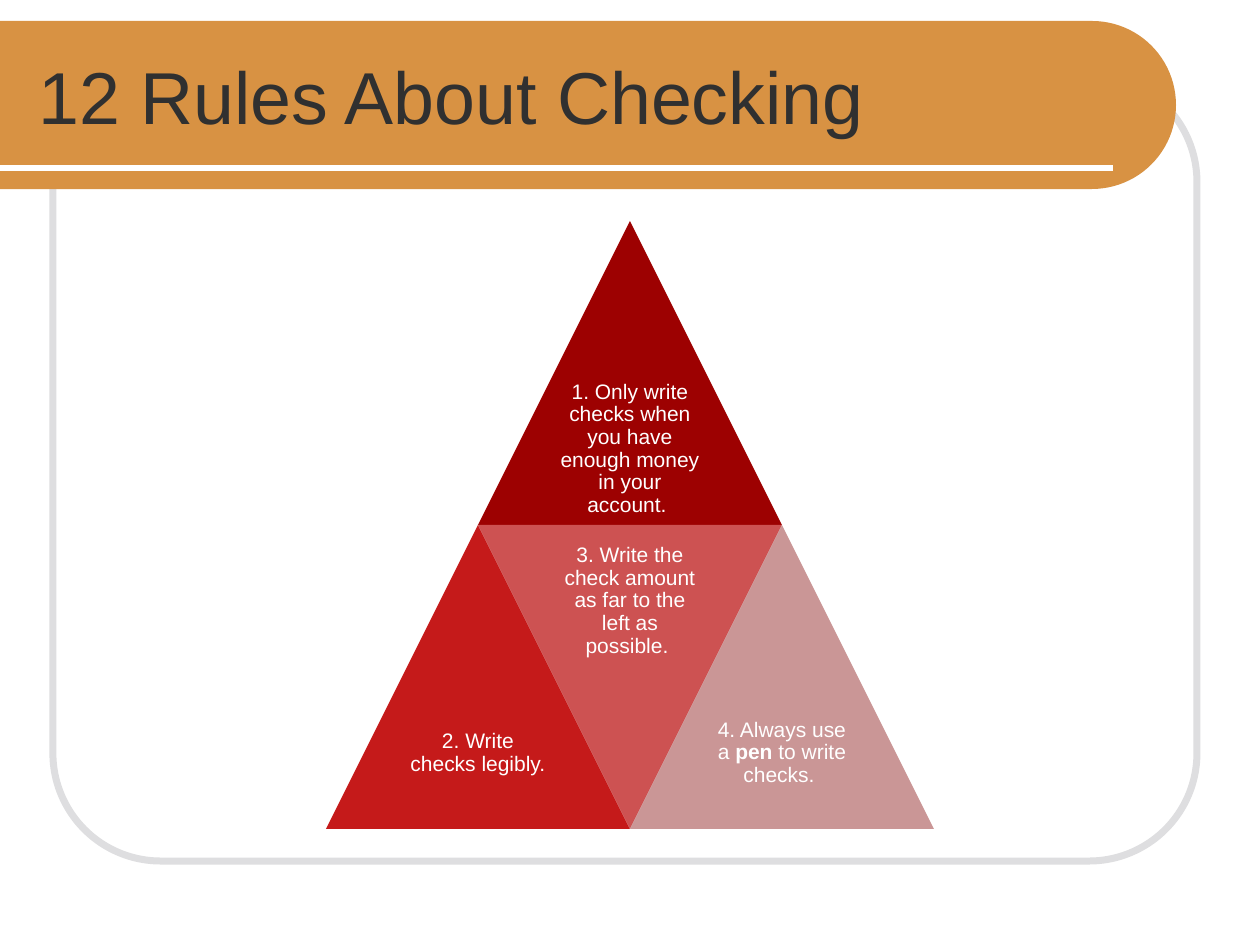
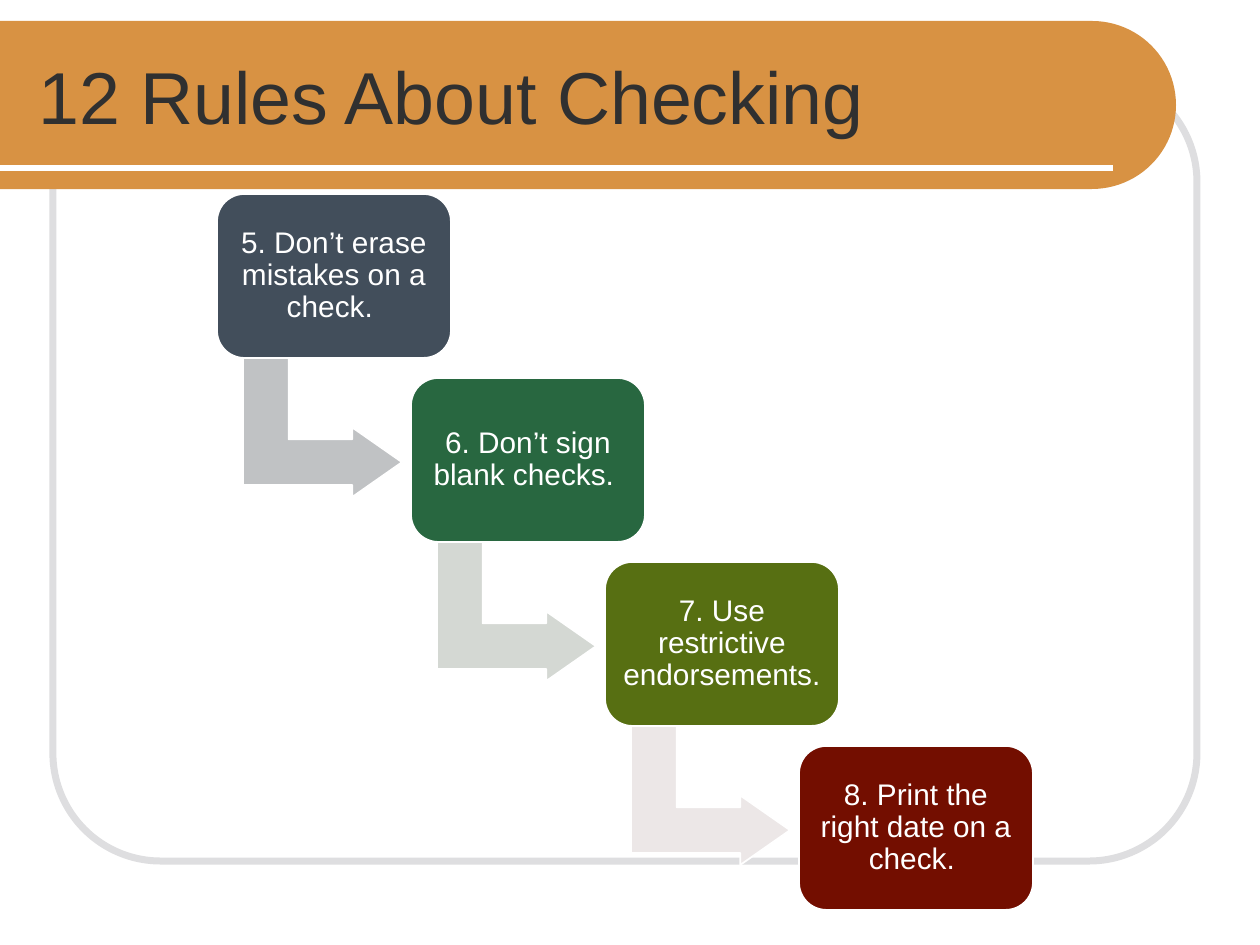
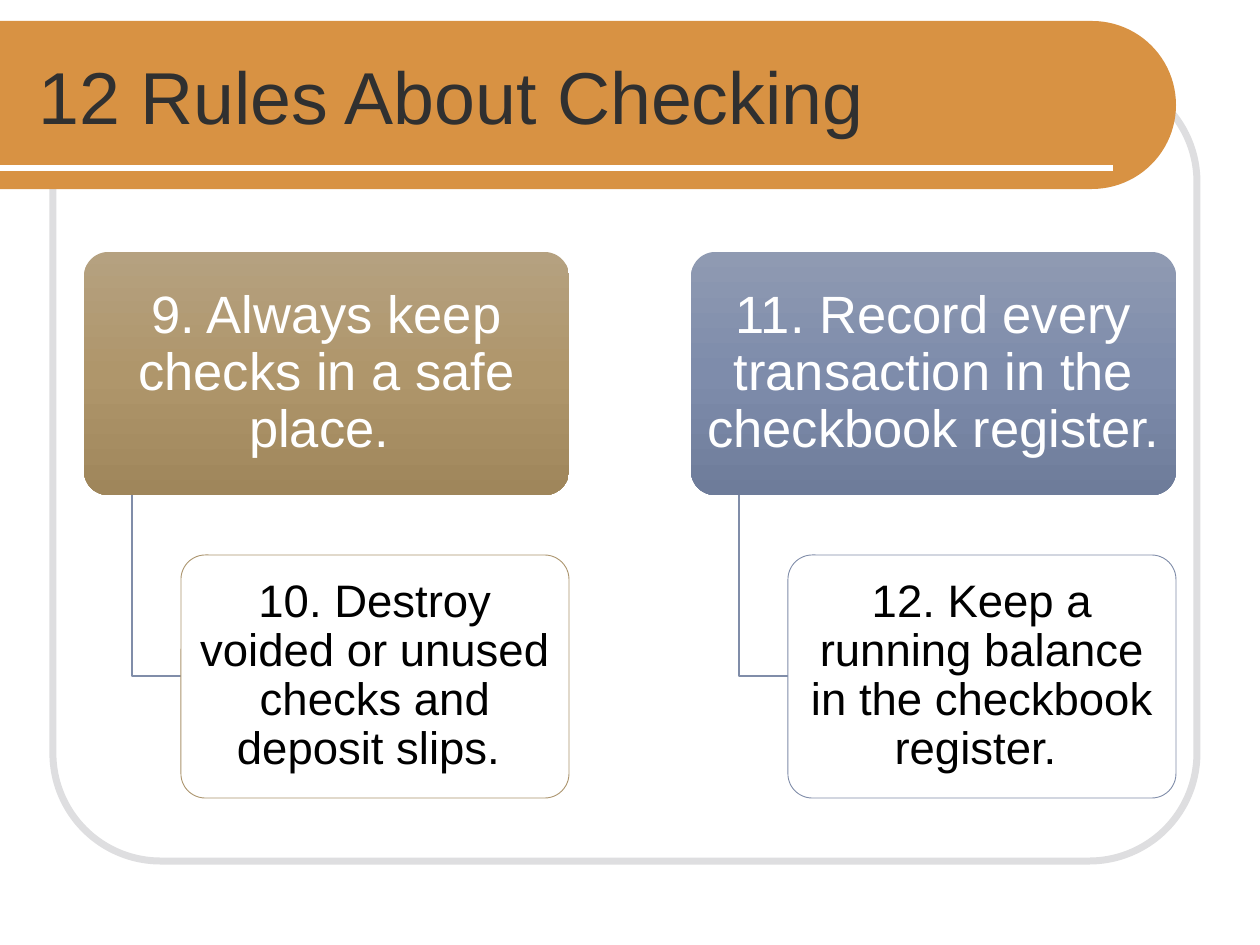
from copy import deepcopy
from dataclasses import dataclass
from math import cos, pi, sin
from typing import NamedTuple

from lxml.etree import SubElement
from pptx import Presentation
from pptx.dml.color import RGBColor
from pptx.enum.shapes import MSO_CONNECTOR, MSO_SHAPE
from pptx.enum.text import MSO_ANCHOR, PP_ALIGN
from pptx.oxml.ns import qn
from pptx.shapes.autoshape import Shape
from pptx.slide import Slide
from pptx.util import Emu, Pt

EMU_PER_PX = 914400 / 126
FONT = "Arial"
TITLE = "12 Rules About Checking"

WHITE = RGBColor(0xFF, 0xFF, 0xFF)
BLACK = RGBColor(0x00, 0x00, 0x00)
TITLE_GRAY = RGBColor(0x30, 0x30, 0x30)
BAND_ORANGE = RGBColor(0xD8, 0x92, 0x43)
FRAME_GRAY = RGBColor(0xDE, 0xDE, 0xE0)
DARK_RED = RGBColor(0x9D, 0x01, 0x01)
RED = RGBColor(0xC5, 0x1A, 0x1A)
ROSE = RGBColor(0xCD, 0x52, 0x52)
PALE_ROSE = RGBColor(0xCA, 0x96, 0x96)
SLATE = RGBColor(0x42, 0x4E, 0x5B)
GREEN = RGBColor(0x28, 0x67, 0x40)
OLIVE = RGBColor(0x57, 0x6F, 0x12)
MAROON = RGBColor(0x73, 0x0E, 0x00)
SILVER = RGBColor(0xC0, 0xC2, 0xC4)
SAGE = RGBColor(0xD4, 0xD8, 0xD3)
BLUSH = RGBColor(0xEC, 0xE7, 0xE7)
TAN = RGBColor(0xAC, 0x95, 0x6E)
STEEL = RGBColor(0x80, 0x8D, 0xA9)
TAN_SHADES = (RGBColor(0xB5, 0xA1, 0x80), RGBColor(0xAF, 0x96, 0x6B), RGBColor(0x9F, 0x86, 0x5B))
STEEL_SHADES = (RGBColor(0x8F, 0x9A, 0xB2), RGBColor(0x7E, 0x8C, 0xAB), RGBColor(0x6E, 0x7C, 0x9A))


class Box(NamedTuple):
    left: int
    top: int
    width: int
    height: int


class Span(NamedTuple):
    text: str
    bold: bool = False


@dataclass(frozen=True)
class Triangle:
    kind: MSO_SHAPE
    column: int
    row: int
    color: RGBColor
    spans: tuple[Span, ...]


@dataclass(frozen=True)
class Step:
    text: str
    color: RGBColor
    arrow: RGBColor | None = None


@dataclass(frozen=True)
class Branch:
    parent: str
    child: str
    shades: tuple[RGBColor, ...]
    outline: RGBColor


TRIANGLES = (
    Triangle(MSO_SHAPE.ISOSCELES_TRIANGLE, 1, 0, DARK_RED,
             (Span("1. Only write checks when you have enough money in your account. "),)),
    Triangle(MSO_SHAPE.ISOSCELES_TRIANGLE, 0, 1, RED, (Span("2. Write checks legibly. "),)),
    Triangle(MSO_SHAPE.FLOWCHART_MERGE, 1, 1, ROSE,
             (Span("3. Write the check amount as far to the left as possible. "),)),
    Triangle(MSO_SHAPE.ISOSCELES_TRIANGLE, 2, 1, PALE_ROSE,
             (Span("4. Always use a "), Span("pen", True), Span(" to write checks. "))),
)
STEPS = (
    Step("5. Don’t erase mistakes on a check. ", SLATE, SILVER),
    Step("6. Don’t sign blank checks. ", GREEN, SAGE),
    Step("7. Use restrictive endorsements. ", OLIVE, BLUSH),
    Step("8. Print the right date on a check. ", MAROON),
)
BRANCHES = (
    Branch("9. Always keep checks in a safe place. ",
           "10. Destroy voided or unused checks and deposit slips. ", TAN_SHADES, TAN),
    Branch("11. Record every transaction in the checkbook register. ",
           "12. Keep a running balance in the checkbook register. ", STEEL_SHADES, STEEL),
)


def px(length: float) -> Emu:
    return Emu(round(length * EMU_PER_PX))


def paint(shape: Shape, fill: RGBColor | None, line: RGBColor | None = None, points: float = 1) -> None:
    shape.shadow.inherit = False
    if fill is None:
        shape.fill.background()
    else:
        shape.fill.solid()
        shape.fill.fore_color.rgb = fill
    if line is None:
        shape.line.fill.background()
    else:
        shape.line.color.rgb = line
        shape.line.width = Pt(points)


def add_preset(page: Slide, kind: MSO_SHAPE, box: Box, fill: RGBColor | None,
               line: RGBColor | None = None, points: float = 1,
               adjustments: tuple[float, ...] = ()) -> Shape:
    shape = page.shapes.add_shape(kind, *map(px, box))
    for index, value in enumerate(adjustments):
        shape.adjustments[index] = value
    paint(shape, fill, line, points)
    return shape


def add_outline(page: Slide, points: list[tuple[float, float]], close: bool) -> Shape:
    corners = [(px(x), px(y)) for x, y in points]
    builder = page.shapes.build_freeform(*corners[0])
    builder.add_line_segments(corners[1:], close=close)
    return builder.convert_to_shape()


def write_rule(shape: Shape, spans: tuple[Span, ...], size: int, inset: int,
               color: RGBColor = WHITE) -> None:
    frame = shape.text_frame
    frame.word_wrap = True
    frame.vertical_anchor = MSO_ANCHOR.MIDDLE
    frame.margin_left = frame.margin_right = px(inset)
    frame.margin_top = frame.margin_bottom = px(inset)
    para = frame.paragraphs[0]
    para.alignment = PP_ALIGN.CENTER
    para.line_spacing = 0.9
    para.font.name = FONT
    para.font.size = Pt(size)
    para.font.color.rgb = color
    for span in spans:
        run = para.add_run()
        run.text = span.text
        if span.bold:
            run.font.bold = True


def shade(shape: Shape, shades: tuple[RGBColor, ...]) -> None:
    shape.fill.gradient()
    shape.fill.gradient_angle = 270
    stop_list = shape._element.spPr.find(f".//{qn('a:gsLst')}")
    stop_list.insert(1, deepcopy(stop_list[0]))
    for index, (stop, color) in enumerate(zip(shape.fill.gradient_stops, shades)):
        stop.position = index / 2
        stop.color.rgb = color


def set_opacity(shape: Shape, percent: int) -> None:
    color = shape._element.spPr.find(f"{qn('a:solidFill')}/{qn('a:srgbClr')}")
    SubElement(color, qn("a:alpha")).set("val", str(percent * 1000))


def add_page(deck: Presentation) -> Slide:
    page = deck.slides.add_slide(deck.slide_layouts[6])
    add_preset(page, MSO_SHAPE.ROUNDED_RECTANGLE, Box(53, 74, 1144, 787), None, FRAME_GRAY, 4, (0.137,))

    radius, center_x, center_y, segments = 84, 1092, 105, 48
    angles = [pi * index / segments - pi / 2 for index in range(segments + 1)]
    arc = [(center_x + radius * cos(angle), center_y + radius * sin(angle)) for angle in angles]
    band = add_outline(page, [(0, center_y - radius), *arc, (0, center_y + radius)], True)
    paint(band, BAND_ORANGE)

    rule = page.shapes.add_connector(MSO_CONNECTOR.STRAIGHT, px(0), px(168), px(1113), px(168))
    rule.line.color.rgb = WHITE
    rule.line.width = Pt(3)
    SubElement(rule._element.spPr, qn("a:effectLst"))

    title = page.shapes.add_textbox(*map(px, Box(26, 32, 1105, 126)))
    frame = title.text_frame
    frame.word_wrap = True
    frame.vertical_anchor = MSO_ANCHOR.MIDDLE
    para = frame.paragraphs[0]
    para.text = TITLE
    para.font.name = FONT
    para.font.size = Pt(42)
    para.font.color.rgb = TITLE_GRAY
    return page


def draw_pyramid(page: Slide) -> None:
    left, top, side = 326, 221, 304
    for triangle in TRIANGLES:
        box = Box(left + triangle.column * side // 2, top + triangle.row * side, side, side)
        shape = add_preset(page, triangle.kind, box, triangle.color)
        write_rule(shape, triangle.spans, 12, 6)


def draw_steps(page: Slide) -> None:
    for index, step in enumerate(STEPS):
        left, top = 217 + 194 * index, 194 + 184 * index
        if step.arrow is not None:
            arrow = add_preset(page, MSO_SHAPE.BENT_UP_ARROW, Box(left + 36, top + 154, 139, 159),
                               step.arrow, WHITE, 1, (0.328, 0.25, 0.358))
            arrow.rotation = 90
        card = add_preset(page, MSO_SHAPE.ROUNDED_RECTANGLE, Box(left, top, 234, 164),
                          step.color, WHITE, 1, (0.167,))
        write_rule(card, (Span(step.text),), 17, 9)


def draw_branches(page: Slide) -> None:
    top, child_top, width, height, indent = 252, 555, 485, 243, 97
    for index, branch in enumerate(BRANCHES):
        left = 84 + 607 * index
        parent = add_preset(page, MSO_SHAPE.ROUNDED_RECTANGLE, Box(left, top, width, height),
                            WHITE, adjustments=(0.1,))
        shade(parent, branch.shades)
        write_rule(parent, (Span(branch.parent),), 30, 7)

        stem, middle = left + indent // 2, child_top + height // 2
        link = add_outline(page, [(stem, top + height), (stem, middle), (left + indent, middle)], False)
        paint(link, None, STEEL)

        child = add_preset(page, MSO_SHAPE.ROUNDED_RECTANGLE,
                           Box(left + indent, child_top, width - indent, height),
                           WHITE, branch.outline, 0.5, (0.1,))
        set_opacity(child, 90)
        write_rule(child, (Span(branch.child),), 26, 6, BLACK)


def main() -> None:
    deck = Presentation()
    deck.slide_width, deck.slide_height = px(1260), px(945)
    for draw in (draw_pyramid, draw_steps, draw_branches):
        draw(add_page(deck))
    deck.save("out.pptx")


if __name__ == "__main__":
    main()
